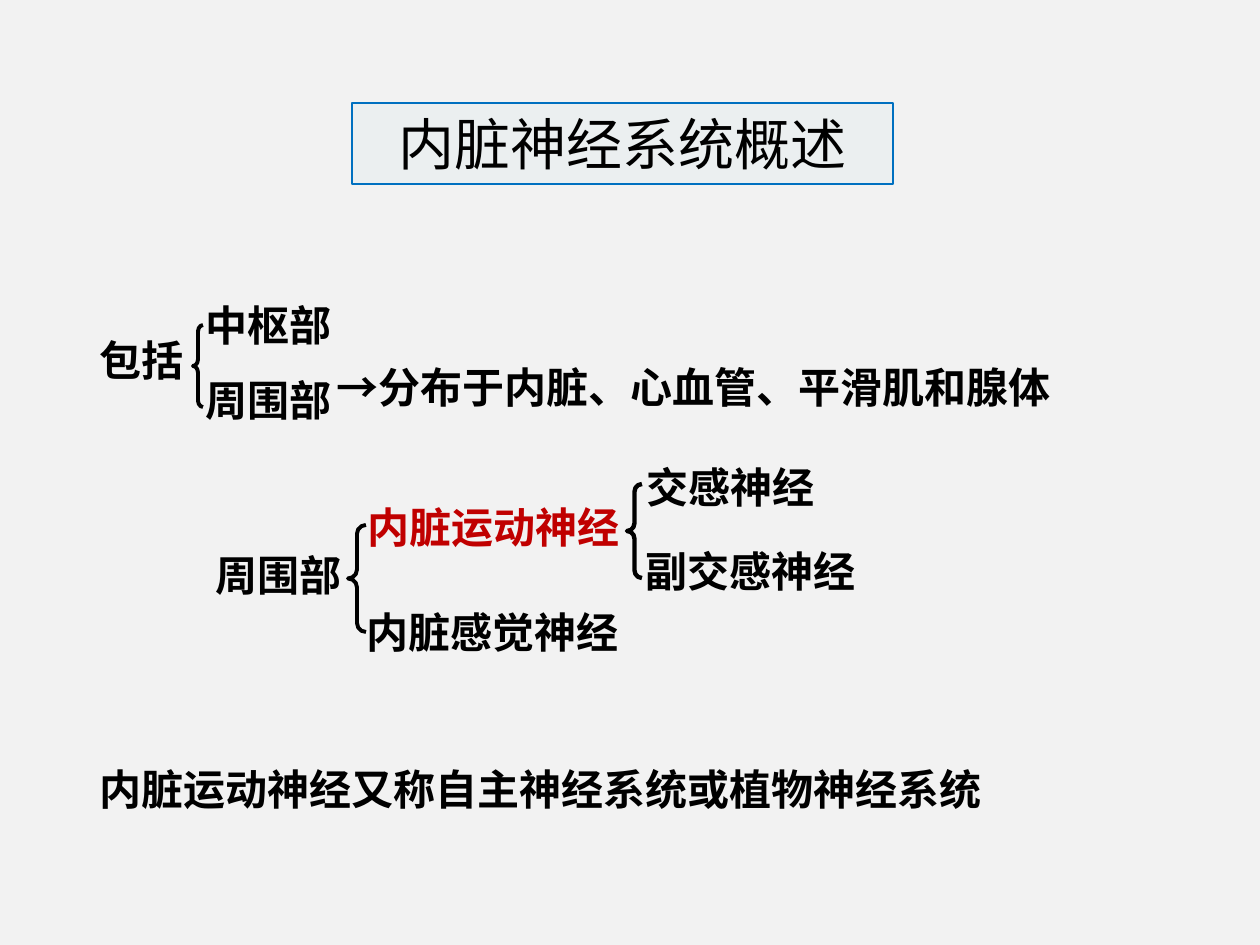
from dataclasses import dataclass

from pptx import Presentation
from pptx import util as u
from pptx.dml.color import RGBColor
from pptx.enum import shapes, text
from pptx.oxml.ns import qn

PX = u.Inches(1) / 126


@dataclass(frozen=True)
class Theme:
    back: str = "F2F2F2"
    panel: str = "EBEFF0"
    edge: str = "0070C0"
    ink: str = "000000"
    key: str = "C00000"
    head: int = 32
    body: int = 24
    latin: str = "Arial"
    font: str = "Noto Sans CJK SC"


def rgb(code):
    return RGBColor.from_string(code)


def px(*sizes):
    return [round(n * PX) for n in sizes]


class Page:
    def __init__(self, slide, theme):
        self.slide, self.theme = slide, theme
        fill = slide.background.fill
        fill.solid()
        fill.fore_color.rgb = rgb(theme.back)

    def style(self, par, size, color, face, bold):
        for run in par.runs:
            font = run.font
            font.size, font.bold, font.name = u.Pt(size), bold, face
            font.color.rgb = rgb(color)
            east = run._r.get_or_add_rPr().makeelement(
                qn("a:ea"), {"typeface": self.theme.font})
            font._rPr.find(qn("a:latin")).addnext(east)

    def title(self, words, *box):
        look = self.theme
        shape = self.slide.shapes.add_shape(
            shapes.MSO_SHAPE.RECTANGLE, *px(*box))
        shape.shadow.inherit = False
        shape.fill.solid()
        shape.fill.fore_color.rgb = rgb(look.panel)
        shape.line.color.rgb = rgb(look.edge)
        shape.line.width = u.Pt(1)
        frame = shape.text_frame
        frame.text = words
        frame.vertical_anchor = text.MSO_ANCHOR.MIDDLE
        par = frame.paragraphs[0]
        par.alignment = text.PP_ALIGN.CENTER
        self.style(par, look.head, look.ink, look.latin, False)

    def label(self, words, x, y, w, h=63, color=None, space=None, wrap=True):
        look = self.theme
        frame = self.slide.shapes.add_textbox(*px(x, y, w, h)).text_frame
        frame.word_wrap = wrap
        frame.text = words
        for par in frame.paragraphs:
            par.line_spacing = space
            self.style(par, look.body, color or look.ink, look.font, True)

    def brace(self, x, y, w, h, bend, width=2.25):
        """Draw a left brace; bend is the curve as a share of its width."""
        shape = self.slide.shapes.add_shape(
            shapes.MSO_SHAPE.LEFT_BRACE, *px(x, y, w, h))
        shape.shadow.inherit = False
        shape.adjustments[0] = bend
        shape.fill.background()
        shape.line.color.rgb = rgb(self.theme.ink)
        shape.line.width = u.Pt(width)


def main():
    deck = Presentation()
    deck.slide_width, deck.slide_height = px(1260, 945)
    theme = Theme()
    page = Page(deck.slides.add_slide(deck.slide_layouts[6]), theme)

    page.title("内脏神经系统概述", 352, 103, 541, 81)

    page.label("包括", 87, 328, 147)
    page.brace(193, 325, 10, 82, 0.65)
    page.label("中枢部\n周围部", 193, 268, 226, 154, space=1.5)
    page.label("→分布于内脏、心血管、平滑肌和腺体", 324, 355, 798)

    page.label("周围部", 203, 543, 152, wrap=False)
    page.brace(348, 525, 18, 107, 0.49)
    page.label("内脏运动神经", 355, 495, 360, color=theme.key)
    page.label("内脏感觉神经", 354, 600, 369)
    page.brace(627, 484, 15, 94, 0.52, 2.5)
    page.label("交感神经", 634, 455, 258)
    page.label("副交感神经", 633, 539, 296)

    page.label("内脏运动神经又称自主神经系统或植物神经系统", 87, 757, 1080)
    deck.save("out.pptx")


if __name__ == "__main__":
    main()
